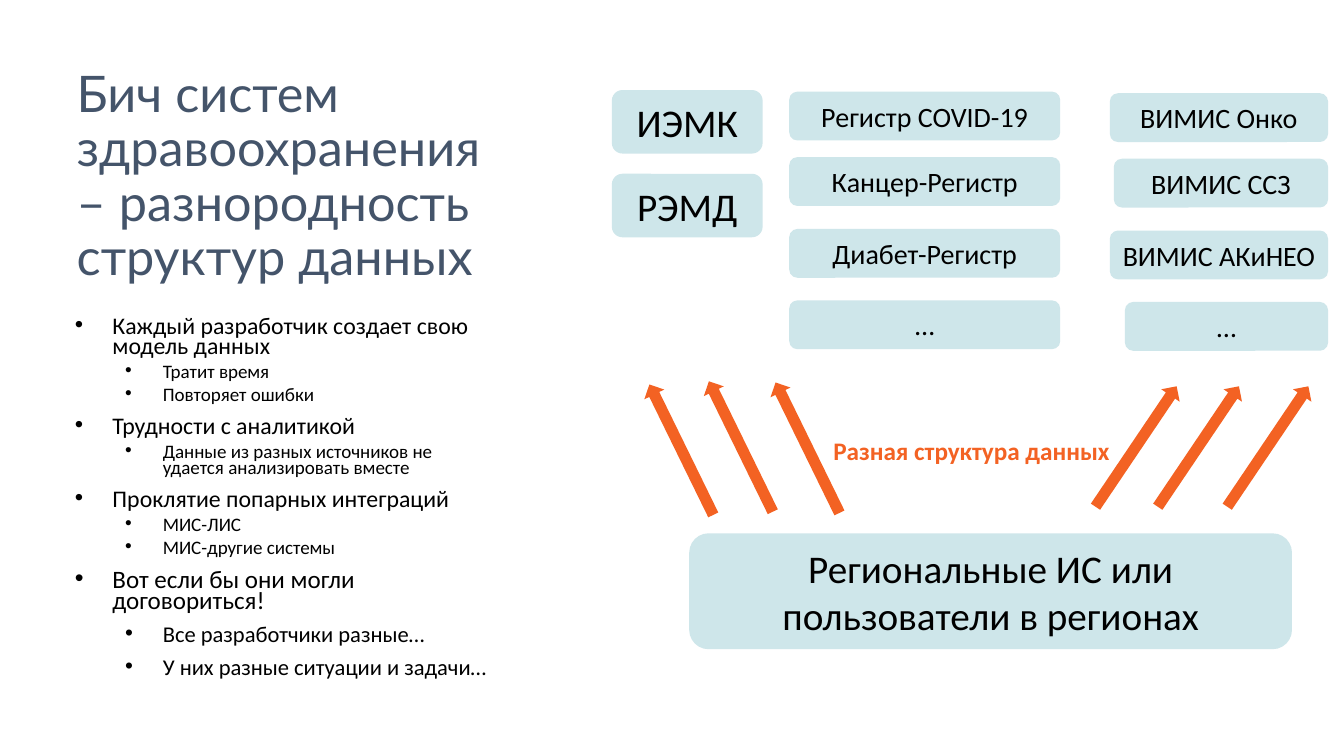
from dataclasses import dataclass

from lxml import etree
from pptx import Presentation
from pptx.dml.color import RGBColor
from pptx.enum.shapes import MSO_SHAPE
from pptx.enum.text import MSO_ANCHOR, MSO_AUTO_SIZE, PP_ALIGN
from pptx.oxml.ns import qn
from pptx.util import Cm, Pt

ROUNDED, ARROW = MSO_SHAPE.ROUNDED_RECTANGLE, MSO_SHAPE.RIGHT_ARROW
LEFT, CENTER = PP_ALIGN.LEFT, PP_ALIGN.CENTER
TOP, MIDDLE, BOTTOM = MSO_ANCHOR.TOP, MSO_ANCHOR.MIDDLE, MSO_ANCHOR.BOTTOM

# Content
TITLE = "Бич систем здравоохранения – разнородность структур данных"
BULLETS = [  # text, style
    ("Каждый разработчик создает свою модель данных", "topic"),
    ("Тратит время", "detail"),
    ("Повторяет ошибки", "detail"),
    ("Трудности с аналитикой", "topic"),
    ("Данные из разных источников не удается анализировать вместе", "detail"),
    ("Проклятие попарных интеграций", "topic"),
    ("МИС-ЛИС", "detail"),
    ("МИС-другие системы", "detail"),
    ("Вот если бы они могли договориться!", "wish"),
    ("Все разработчики разные…", "reason"),
    ("У них разные ситуации и задачи…", "reason"),
]
FEDERAL = ["ИЭМК", "РЭМД"]
REGISTERS = ["Регистр COVID-19", "Канцер-Регистр", "Диабет-Регистр", "…"]
VIMIS = [("ВИМИС Онко", 27.97), ("ВИМИС ССЗ", 28.07),
         ("ВИМИС АКиНЕО", 27.97), ("…", 28.35)]  # text, left edge
REGIONS = "Региональные ИС или пользователи в регионах"
ARROW_LABEL = "Разная структура данных"
ARROWS = [  # left, top, rotation
    (26.8, 10.97, 304), (28.37, 10.97, 304), (30.12, 10.97, 304),
    (16.84, 10.97, 243.9), (15.34, 11.05, 243.9), (18.52, 11.0, 243.9),
]


@dataclass(frozen=True)
class Theme:
    heading_font: str = "Lato"
    body_font: str = "Calibri"
    heading: RGBColor = RGBColor(0x44, 0x54, 0x6A)
    text: RGBColor = RGBColor(0, 0, 0)
    box: RGBColor = RGBColor(0xCE, 0xE6, 0xEA)
    accent: RGBColor = RGBColor(0xF3, 0x62, 0x23)
    title_size: float = 36
    large: float = 28
    medium: float = 20
    label: float = 18


THEME = Theme()
# style: size, level, left margin in cm, space before
BULLET_STYLES = {
    "topic": (17, 0, 0.95, 10),
    "detail": (13.6, 1, 2.22, 5),
    "wish": (17.9, 1, 0.95, 10),
    "reason": (16.1, 2, 2.22, 10),
}
HANGING = Cm(0.95)
ROW_TOPS = [2.31, 3.96, 5.77, 7.57]
ROW_HEIGHT = 1.23
VIMIS_RIGHT, VIMIS_DROP = 33.47, 0.04


def place(shape, left, top, width, height):
    shape.left, shape.top = Cm(left), Cm(top)
    shape.width, shape.height = Cm(width), Cm(height)


def add_span(para, text, size, color=THEME.text, font=THEME.body_font, bold=False):
    span = para.add_run()
    span.text = text
    span.font.size, span.font.name = Pt(size), font
    span.font.color.rgb, span.font.bold = color, bold


def prepare_frame(shape, anchor, wrap=True):
    frame = shape.text_frame
    frame.word_wrap, frame.vertical_anchor = wrap, anchor
    frame.auto_size = MSO_AUTO_SIZE.NONE
    return frame


def add_flat(page, kind, left, top, width, height, color):
    shape = page.shapes.add_shape(kind, Cm(left), Cm(top), Cm(width), Cm(height))
    shape.shadow.inherit = False
    shape.fill.solid()
    shape.fill.fore_color.rgb = color
    shape.line.fill.background()
    return shape


def add_box(page, text, left, top, width, height, size):
    box = add_flat(page, ROUNDED, left, top, width, height, THEME.box)
    para = prepare_frame(box, MIDDLE).paragraphs[0]
    para.alignment = CENTER
    add_span(para, text, size)


def set_bullet(para, margin):
    properties = para._p.get_or_add_pPr()
    properties.set("marL", str(Cm(margin)))
    properties.set("indent", str(-HANGING))
    etree.SubElement(properties, qn("a:buFont")).set("typeface", "Arial")
    etree.SubElement(properties, qn("a:buChar")).set("char", "•")


def add_title(page):
    title = page.shapes.title
    place(title, 1.68, 0.97, 11.05, 6.38)
    para = prepare_frame(title, BOTTOM).paragraphs[0]
    para.alignment, para.line_spacing = LEFT, 0.9
    add_span(para, TITLE, THEME.title_size, THEME.heading, THEME.heading_font)


def add_bullets(page):
    body = page.placeholders[1]
    place(body, 1.63, 7.9, 11.05, 10.34)
    frame = prepare_frame(body, TOP)
    for index, (text, style) in enumerate(BULLETS):
        size, level, margin, before = BULLET_STYLES[style]
        para = frame.add_paragraph() if index else frame.paragraphs[0]
        para.level, para.alignment = level, LEFT
        para.line_spacing, para.space_before = 0.7, Pt(before)
        set_bullet(para, margin)
        add_span(para, text, size)


def add_systems(page):
    add_box(page, REGIONS, 17.37, 13.44, 15.19, 2.92, THEME.large)
    for index, text in enumerate(FEDERAL):
        add_box(page, text, 15.42, 2.27 + 2.11 * index, 3.8, 1.6, THEME.large)
    for text, top in zip(REGISTERS, ROW_TOPS):
        add_box(page, text, 19.89, top, 6.83, ROW_HEIGHT, THEME.medium)
    for (text, left), top in zip(VIMIS, ROW_TOPS):
        add_box(page, text, left, top + VIMIS_DROP, VIMIS_RIGHT - left,
                ROW_HEIGHT, THEME.medium)


def add_flows(page):
    for left, top, rotation in ARROWS:
        add_flat(page, ARROW, left, top, 3.66, 0.56, THEME.accent).rotation = rotation
    label = page.shapes.add_textbox(Cm(20.75), Cm(10.85), Cm(7.54), Cm(1.02))
    para = prepare_frame(label, TOP, wrap=False).paragraphs[0]
    add_span(para, ARROW_LABEL, THEME.label, THEME.accent, bold=True)


def main():
    deck = Presentation()
    deck.slide_width, deck.slide_height = Cm(33.87), Cm(19.05)
    page = deck.slides.add_slide(deck.slide_layouts[0])
    add_title(page)
    add_bullets(page)
    add_systems(page)
    add_flows(page)
    deck.save("out.pptx")


if __name__ == "__main__":
    main()
